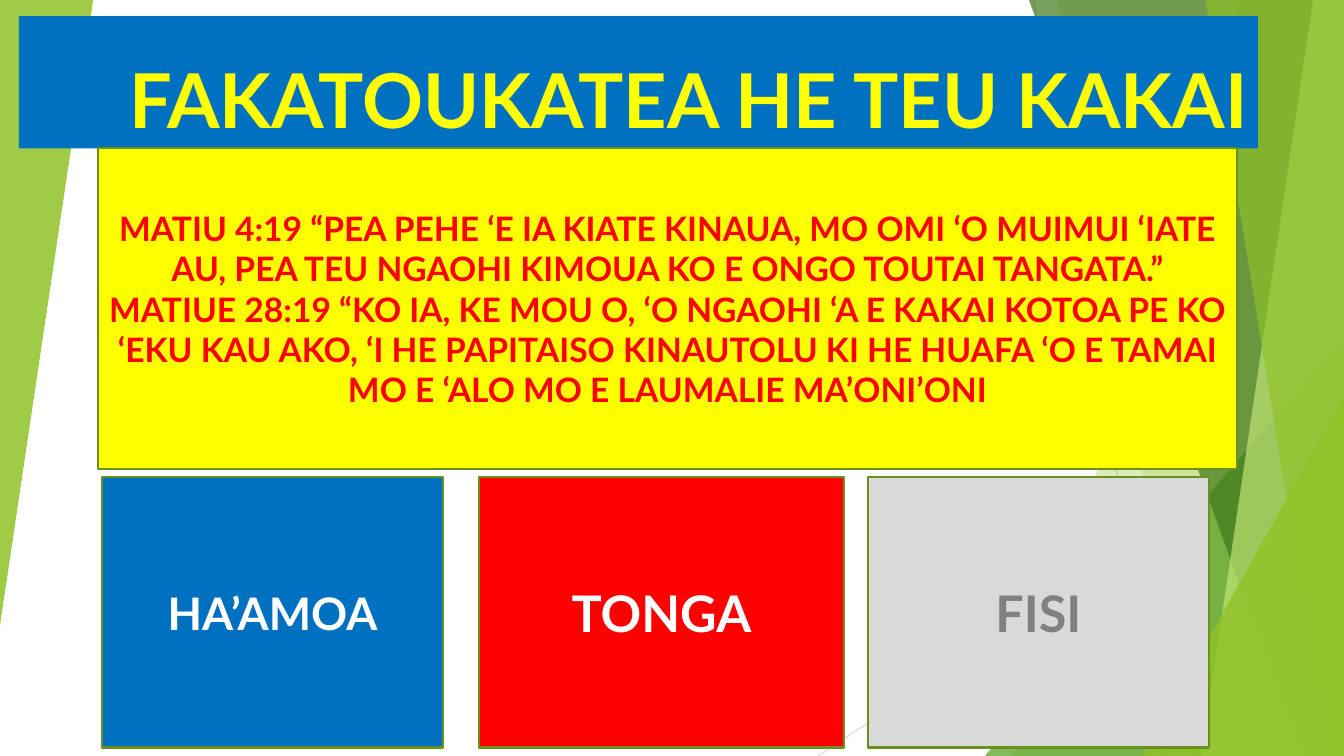
import pptx
import pptx.util
import pptx.dml.color
import pptx.enum.shapes
import pptx.enum.text
import pptx.oxml
import pptx.oxml.ns
import lxml.etree

Pt = pptx.util.Pt
RGBColor = pptx.dml.color.RGBColor
MSO_SHAPE = pptx.enum.shapes.MSO_SHAPE
PP_ALIGN = pptx.enum.text.PP_ALIGN
MSO_ANCHOR = pptx.enum.text.MSO_ANCHOR
qn = pptx.oxml.ns.qn

FONT = "Lato"
WIDTH, HEIGHT = 960, 540

LIME = RGBColor(0x90, 0xC2, 0x26)
GREEN = RGBColor(0x54, 0xA0, 0x21)
DARK_GREEN = RGBColor(0x3F, 0x78, 0x19)
PALE_LIME = RGBColor(0xC0, 0xE4, 0x74)
OLIVE = RGBColor(0x6B, 0x90, 0x1C)
BLUE = RGBColor(0x00, 0x70, 0xC0)
RED = RGBColor(0xFF, 0x00, 0x00)
YELLOW = RGBColor(0xFF, 0xFF, 0x00)
WHITE = RGBColor(0xFF, 0xFF, 0xFF)
SILVER = RGBColor(0xBF, 0xBF, 0xBF)
LIGHT_GREY = RGBColor(0xD9, 0xD9, 0xD9)
GREY = RGBColor(0x80, 0x80, 0x80)

TITLE = "FAKATOUKATEA HE TEU KAKAI"
VERSES = [
    "MATIU 4:19 “PEA PEHE ‘E IA KIATE KINAUA, MO OMI ‘O MUIMUI ‘IATE AU, "
    "PEA TEU NGAOHI KIMOUA KO E ONGO TOUTAI TANGATA.”",
    "MATIUE 28:19 “KO IA, KE MOU O, ‘O NGAOHI ‘A E KAKAI KOTOA PE KO "
    "‘EKU KAU AKO, ‘I HE PAPITAISO KINAUTOLU KI HE HUAFA ‘O E TAMAI "
    "MO E ‘ALO MO E LAUMALIE MA’ONI’ONI",
]


def fill_translucent(s, color, opacity):
    s.shadow.inherit = False
    s.line.fill.background()
    s.fill.solid()
    s.fill.fore_color.rgb = color
    clr = s.fill._xPr.find(qn("a:solidFill"))[0]
    lxml.etree.SubElement(clr, qn("a:alpha")).set("val", str(opacity * 1000))


def add_line(slide, x1, y1, x2, y2, color):
    s = slide.shapes.add_connector(
        pptx.enum.shapes.MSO_CONNECTOR.STRAIGHT, Pt(x1), Pt(y1), Pt(x2), Pt(y2))
    s.line.color.rgb = color
    s.line.width = Pt(0.75)
    lxml.etree.SubElement(s._element.spPr, qn("a:effectLst"))


def add_band(slide, top_x, bottom_x, color, opacity):
    builder = slide.shapes.build_freeform(Pt(top_x), 0)
    builder.add_line_segments(
        [(Pt(WIDTH), 0), (Pt(WIDTH), Pt(HEIGHT)), (Pt(bottom_x), Pt(HEIGHT))])
    fill_translucent(builder.convert_to_shape(), color, opacity)


def add_triangle(slide, x, y, w, h, color, opacity, rotation=0):
    s = slide.shapes.add_shape(
        MSO_SHAPE.ISOSCELES_TRIANGLE, Pt(x), Pt(y), Pt(w), Pt(h))
    s.adjustments[0] = 1.0
    s.rotation = rotation
    fill_translucent(s, color, opacity)


def add_panel(slide, x, y, w, h, fill, lines, size, color, outline=OLIVE,
              align=PP_ALIGN.CENTER, anchor=MSO_ANCHOR.MIDDLE):
    s = slide.shapes.add_shape(
        MSO_SHAPE.RECTANGLE, Pt(x), Pt(y), Pt(w), Pt(h))
    s.shadow.inherit = False
    s.fill.solid()
    s.fill.fore_color.rgb = fill
    if outline is None:
        s.line.fill.background()
    else:
        s.line.color.rgb = outline
        s.line.width = Pt(1.5)
    tf = s.text_frame
    tf.word_wrap = True
    tf.vertical_anchor = anchor
    tf.text = "\n".join(lines)
    for p in tf.paragraphs:
        p.alignment = align
        for r in p.runs:
            r.font.name = FONT
            r.font.size = Pt(size)
            r.font.bold = True
            r.font.color.rgb = color


def add_backdrop(slide):
    add_line(slide, 738, 0, 834, HEIGHT, SILVER)
    add_line(slide, WIDTH, 290, 584.5, HEIGHT, LIGHT_GREY)
    add_band(slide, 884, 723, LIME, 30)
    add_band(slide, 756, 852, LIME, 20)
    add_triangle(slide, 703.5, 240, 256.5, 300, GREEN, 72)
    add_band(slide, 735, 929.5, DARK_GREEN, 70)
    add_band(slide, 938, 858, PALE_LIME, 70)
    add_band(slide, 861, 949, LIME, 65)
    add_triangle(slide, 816.5, 283, 143.5, 257, LIME, 80)
    add_triangle(slide, 0, 0, 66.5, 446.5, LIME, 85, rotation=180)


def main():
    prs = pptx.Presentation()
    prs.slide_width, prs.slide_height = Pt(WIDTH), Pt(HEIGHT)
    slide = prs.slides.add_slide(prs.slide_layouts[6])
    add_backdrop(slide)
    add_panel(slide, 13.5, 11.5, 885, 94.5, BLUE, [TITLE], 54, YELLOW,
              outline=None, align=PP_ALIGN.RIGHT, anchor=MSO_ANCHOR.BOTTOM)
    for x, w, fill, name, size, color in [
        (73, 243.5, BLUE, "HA’AMOA", 32, WHITE),
        (342, 261, RED, "TONGA", 36, WHITE),
        (620, 243.5, LIGHT_GREY, "FISI", 36, GREY),
    ]:
        add_panel(slide, x, 340.5, w, 193.5, fill, [name], size, color)
    add_panel(slide, 70, 106, 813.5, 229, YELLOW, VERSES, 24, RED)
    prs.save("out.pptx")


if __name__ == "__main__":
    main()
